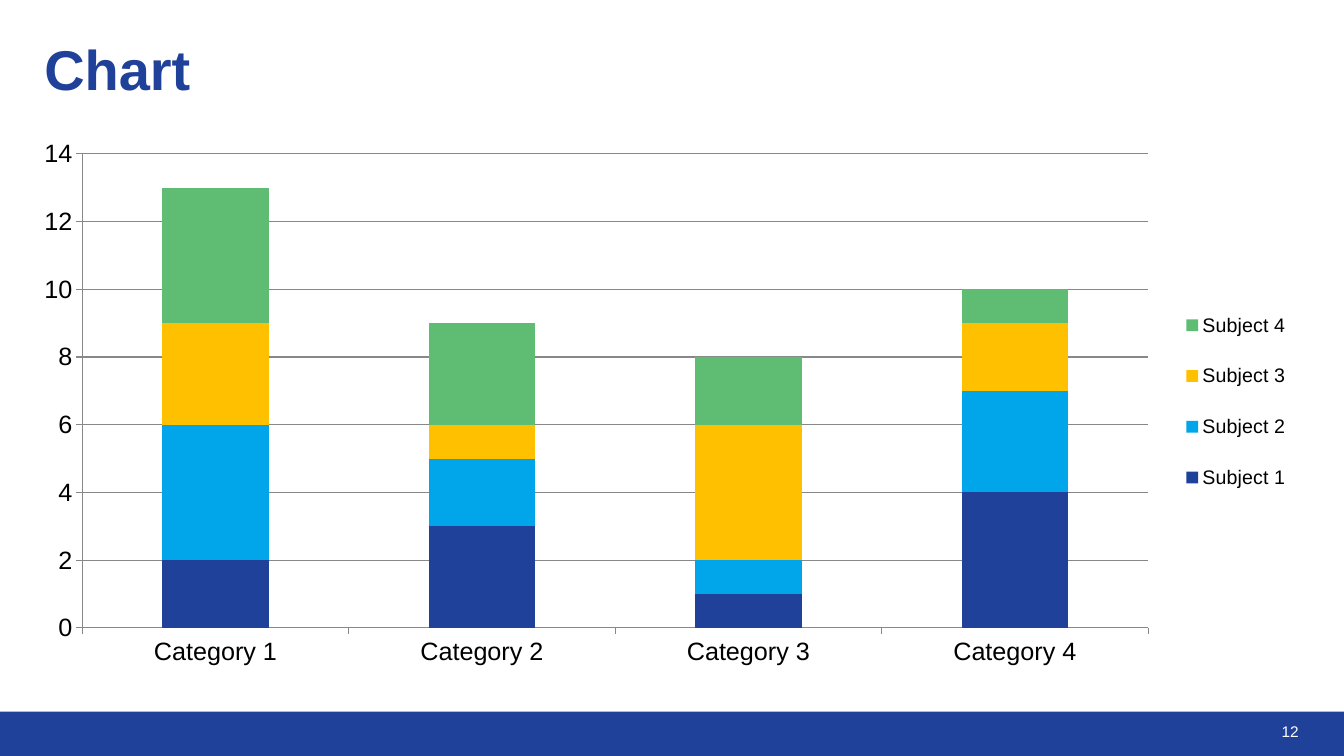
"""Build a slide with a stacked column chart of four subjects."""
from lxml.etree import SubElement
from pptx import Presentation
from pptx.chart.data import CategoryChartData
from pptx.dml.color import RGBColor
from pptx.enum.chart import XL_CHART_TYPE as ChartType, XL_LEGEND_POSITION as LegendPosition
from pptx.enum.chart import XL_TICK_MARK as TickMark
from pptx.enum.shapes import MSO_SHAPE as Shape
from pptx.enum.text import MSO_ANCHOR as Anchor, PP_ALIGN as Align
from pptx.oxml.ns import qn
from pptx.util import Pt

BLUE = "20419A"
GRAY = "888888"
WHITE = "FFFFFF"
BLACK = "000000"


def color(value):
    return RGBColor.from_string(value)


def style_font(font, size, value, bold=False):
    font_format = {"name": "Arial", "size": Pt(size), "bold": bold}
    for name, setting in font_format.items():
        setattr(font, name, setting)
    font.color.rgb = color(value)


deck = Presentation()
deck.slide_width, deck.slide_height = Pt(960.5), Pt(540)
page = deck.slides.add_slide(deck.slide_layouts[6])

footer = page.shapes.add_shape(Shape.RECTANGLE, 0, Pt(508.3), deck.slide_width, Pt(31.7))
footer.shadow.inherit = False
footer.fill.solid()
footer.fill.fore_color.rgb = color(BLUE)
footer.line.fill.background()

labels = [
    ("Chart", (31.7, 31.7, 897, 33.8), 0, Align.LEFT, 40, BLUE, True),
    ("12", (719.3, 517, 216, 10.8), 7.2, Align.RIGHT, 11, WHITE, False),
]
for text, bounds, inset, alignment, size, text_color, bold in labels:
    box = page.shapes.add_textbox(*map(Pt, bounds))
    frame_format = {
        "word_wrap": True,
        "vertical_anchor": Anchor.MIDDLE,
        "margin_left": Pt(inset),
        "margin_right": Pt(inset),
        "margin_top": 0,
        "margin_bottom": 0,
    }
    for name, setting in frame_format.items():
        setattr(box.text_frame, name, setting)
    para = box.text_frame.paragraphs[0]
    para.alignment = alignment
    span = para.add_run()
    span.text = text
    style_font(span.font, size, text_color, bold)

subjects = [
    ("Subject 1", (2, 3, 1, 4), BLUE),
    ("Subject 2", (4, 2, 1, 3), "00A6E9"),
    ("Subject 3", (3, 1, 4, 2), "FFC000"),
    ("Subject 4", (4, 3, 2, 1), "5EBD72"),
]
data = CategoryChartData()
data.categories = [f"Category {number}" for number in range(1, 5)]
for name, values, _ in subjects:
    data.add_series(name, values)
bounds = map(Pt, (31.7, 98.6, 896.4, 377.3))
chart = page.shapes.add_chart(ChartType.COLUMN_STACKED, *bounds, data).chart
chart.has_title = False
style_font(chart.font, 18, BLACK)

plot = chart.plots[0]
plot_format = {"gap_width": 150, "overlap": 100, "vary_by_categories": False}
for name, setting in plot_format.items():
    setattr(plot, name, setting)
for series, (_, _, fill_color) in zip(plot.series, subjects):
    series.format.fill.solid()
    series.format.fill.fore_color.rgb = color(fill_color)

value_axis = chart.value_axis
value_format = {
    "minimum_scale": 0,
    "maximum_scale": 14,
    "major_unit": 2,
    "has_major_gridlines": True,
}
for name, setting in value_format.items():
    setattr(value_axis, name, setting)
for axis in (chart.category_axis, value_axis):
    axis.major_tick_mark = TickMark.OUTSIDE
    axis.minor_tick_mark = TickMark.NONE
    style_font(axis.tick_labels.font, 18, BLACK)
for lined in (chart.category_axis, value_axis, value_axis.major_gridlines):
    lined.format.line.color.rgb = color(GRAY)
    lined.format.line.width = Pt(0.75)

chart.has_legend = True
chart.legend.position = LegendPosition.RIGHT
chart.legend.include_in_layout = False
style_font(chart.legend.font, 14, BLACK)

layouts = [
    ("plotArea", 0, "inner", (0.03, 0.03, 0.85, 0.9)),
    ("legend", 1, None, (0.9, 0.28, 0.1, 0.44)),
]
for part, position, target, fractions in layouts:
    parent = chart._chartSpace.xpath(f"c:chart/c:{part}")[0]
    for old_layout in parent.findall(qn("c:layout")):
        parent.remove(old_layout)
    layout = SubElement(parent, qn("c:layout"))
    parent.insert(position, layout)
    manual = SubElement(layout, qn("c:manualLayout"))
    settings = [("layoutTarget", target)] if target else []
    settings += [("xMode", "edge"), ("yMode", "edge")]
    settings += zip("xywh", map(str, fractions))
    for name, setting in settings:
        SubElement(manual, qn(f"c:{name}")).set("val", setting)

deck.save("out.pptx")
